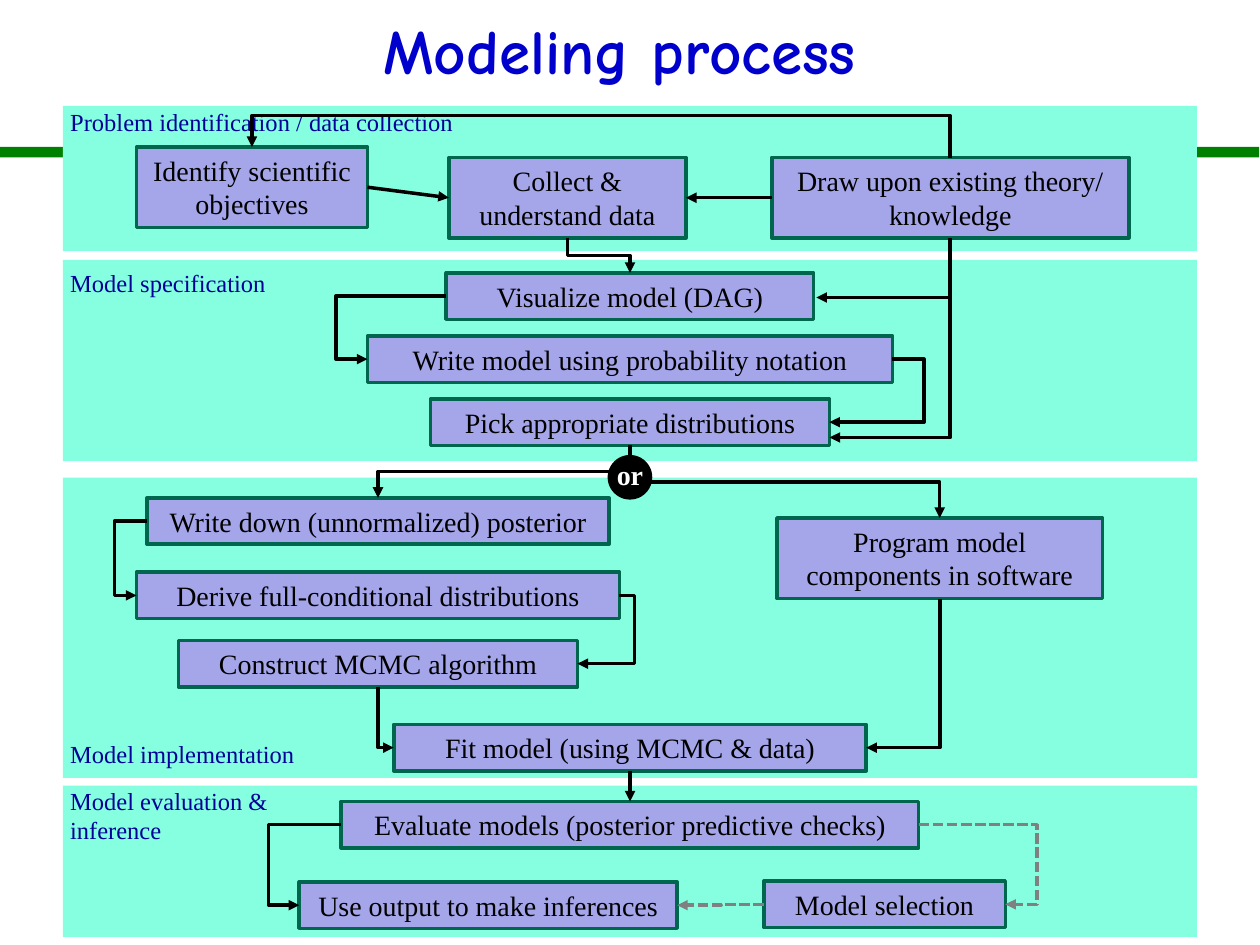
from lxml.etree import SubElement
from pptx import Presentation
from pptx.dml.color import RGBColor as Rgb
from pptx.enum.dml import MSO_LINE_DASH_STYLE as Dash
from pptx.enum.shapes import MSO_CONNECTOR as Link, MSO_SHAPE as Preset
from pptx.enum.text import MSO_ANCHOR as Anchor, MSO_AUTO_SIZE as Fit, PP_ALIGN as Align
from pptx.oxml.ns import qn
from pptx.util import Pt

COLORS = {
    "panel": "85FFE0", "rule": "008000", "box": "A5A5E9", "edge": "00664D",
    "title": "0000CC", "label": "000099", "black": "000000",
    "white": "FFFFFF", "optional": "808080",
}
SERIF = "Times New Roman"
TOP, LEFT, BOTTOM, RIGHT = range(4)
ONE, TWO = 26.5, 46  # heights of one-line and two-line boxes

PANELS = [(60.5, 83), (148.5, 115), (273, 171.5), (449, 86.5)]  # top, height

BOXES = {  # text, left, top, width, height
    "objectives": ("Identify scientific objectives", 78, 84, 132, TWO),
    "data": ("Collect & understand data", 256.5, 90, 135.5, TWO),
    "theory": ("Draw upon existing theory/\nknowledge", 441, 90, 204, TWO),
    "visualize": ("Visualize model (DAG)", 255, 156, 210, ONE),
    "notation": ("Write model using probability notation", 210, 192, 300, ONE),
    "distributions": ("Pick appropriate distributions", 246, 228, 228, ONE),
    "posterior": ("Write down (unnormalized) posterior", 84, 284.5, 264, ONE),
    "conditionals": ("Derive full-conditional distributions", 78, 327, 276, ONE),
    "algorithm": ("Construct MCMC algorithm", 102, 366, 228, ONE),
    "fit": ("Fit model (using MCMC & data)", 225, 414, 270, ONE),
    "evaluate": ("Evaluate models (posterior predictive checks)", 195, 458, 330, ONE),
    "inferences": ("Use output to make inferences", 171, 504, 216, ONE),
    "selection": ("Model selection", 436.5, 503.5, 138, ONE),
    "software": ("Program model components in software", 444, 296, 186, TWO),
}

LABELS = [  # text, top, width, height
    ("Problem identification / data collection", 57.5, 239, 24.5),
    ("Model specification", 149.5, 127.5, 24.5),
    ("Model implementation", 418.5, 144, 24.5),
    ("Model evaluation &\ninference", 445.5, 128, 41),
]

STRAIGHT = [
    ("objectives", RIGHT, "data", LEFT),
    ("theory", LEFT, "data", RIGHT),
    ("fit", BOTTOM, "evaluate", TOP),
]

ELBOWS = [  # from, side, to, side, place of the middle leg (None: one corner)
    ("visualize", LEFT, "notation", LEFT, 192),
    ("notation", RIGHT, "distributions", RIGHT, 528),
    ("distributions", BOTTOM, "software", TOP, 275.5),
    ("distributions", BOTTOM, "posterior", TOP, 269.5),
    ("posterior", LEFT, "conditionals", LEFT, 65.5),
    ("conditionals", RIGHT, "algorithm", RIGHT, 362.5),
    ("algorithm", BOTTOM, "fit", LEFT, None),
    ("software", BOTTOM, "fit", RIGHT, None),
    ("evaluate", LEFT, "inferences", LEFT, 153.5),
    ("theory", TOP, "objectives", TOP, 66),
    ("data", BOTTOM, "visualize", TOP, 146),
]

OPTIONAL = [
    ("evaluate", RIGHT, "selection", RIGHT, 592.5),
    ("selection", LEFT, "inferences", RIGHT, 412),
]


def set_values(target, values):
    for name, value in values.items():
        setattr(target, name, value)


def write(shape, text, font, color, align=Align.CENTER, **frame_values):
    """Fill one paragraph, with a line break at each newline."""
    frame = shape.text_frame
    set_values(frame, {"word_wrap": True, "vertical_anchor": Anchor.TOP, **frame_values})
    para = frame.paragraphs[0]
    para.alignment = align
    for number, line in enumerate(text.split("\n")):
        if number:
            para.add_line_break()
        span = para.add_run()
        span.text = line
        set_values(span.font, font)
        span.font.color.rgb = Rgb.from_string(COLORS[color])


def add_block(page, place, fill, edge=None, preset=Preset.RECTANGLE):
    shape = page.shapes.add_shape(preset, *map(Pt, place))
    shape.shadow.inherit = False
    shape.fill.solid()
    shape.fill.fore_color.rgb = Rgb.from_string(COLORS[fill])
    if edge:
        shape.line.color.rgb = Rgb.from_string(COLORS[edge])
        shape.line.width = Pt(2)
    else:
        shape.line.fill.background()
    return shape


def add_text(page, place, *content, **values):
    write(page.shapes.add_textbox(*map(Pt, place)), *content, **values)


def side_point(box, side):
    across = {LEFT: 0, RIGHT: 2}.get(side, 1)
    down = {TOP: 0, BOTTOM: 2}.get(side, 1)
    return box.left + box.width * across // 2, box.top + box.height * down // 2


def style_arrow(arrow, color="black", dash=None):
    arrow.line.color.rgb = Rgb.from_string(COLORS[color])
    arrow.line.width = Pt(2)
    if dash:
        arrow.line.dash_style = dash
    line = arrow.line._get_or_add_ln()
    SubElement(line, qn("a:tailEnd"), type="triangle")
    SubElement(arrow._element.spPr, qn("a:effectLst"))


def add_straight(page, start_box, start_side, end_box, end_side):
    arrow = page.shapes.add_connector(Link.STRAIGHT, 0, 0, 0, 0)
    arrow.begin_connect(start_box, start_side)
    arrow.end_connect(end_box, end_side)
    style_arrow(arrow)


def add_elbow(page, start, end, upright, bend=None, **style):
    """Draw an elbow; upright ones leave vertically and are turned by 90 degrees."""
    (x1, y1), (x2, y2) = start, end
    ends = [x1, y1, x2, y2]
    if upright:
        mid_x, mid_y = (x1 + x2) // 2, (y1 + y2) // 2
        half_x, half_y = (x2 - x1) // 2, (y2 - y1) // 2
        ends = [mid_x - half_y, mid_y + half_x, mid_x + half_y, mid_y - half_x]
    arrow = page.shapes.add_connector(Link.ELBOW, *ends)
    properties = arrow._element.spPr
    if upright:
        properties.find(qn("a:xfrm")).set("rot", "5400000")
    shape = properties.find(qn("a:prstGeom"))
    if bend is None:
        shape.set("prst", "bentConnector2")
    else:
        first, last = (y1, y2) if upright else (x1, x2)
        share = round((Pt(bend) - first) / (last - first) * 100000)
        guides = shape.find(qn("a:avLst"))
        SubElement(guides, qn("a:gd"), name="adj1", fmla=f"val {share}")
    style_arrow(arrow, **style)


def main():
    deck = Presentation()
    deck.slide_width, deck.slide_height = Pt(720), Pt(540)
    page = deck.slides.add_slide(deck.slide_layouts[6])

    # Background rule, panels and title
    add_block(page, (0, 84, 719.5, 6), "rule")
    for top, height in PANELS:
        add_block(page, (36, top, 648, height), "panel")
    add_text(page, (48, 9.5, 612, 44), "Modeling process",
             {"name": "Comic Neue", "size": Pt(36), "bold": True}, "title",
             vertical_anchor=Anchor.BOTTOM)

    # Steps and panel labels
    boxes = {}
    for key, (text, *place) in BOXES.items():
        boxes[key] = add_block(page, place, "box", "edge")
        write(boxes[key], text, {"name": SERIF, "size": Pt(16)}, "black")
    for text, top, width, height in LABELS:
        add_text(page, (33, top, width, height), text,
                 {"name": SERIF, "size": Pt(14)}, "label", Align.LEFT,
                 word_wrap=False, auto_size=Fit.SHAPE_TO_FIT_TEXT)

    # Arrows between steps
    for start, start_side, end, end_side in STRAIGHT:
        add_straight(page, boxes[start], start_side, boxes[end], end_side)
    gray = {"color": "optional", "dash": Dash.SQUARE_DOT}
    for routes, style in ((ELBOWS, {}), (OPTIONAL, gray)):
        for start, start_side, end, end_side, bend in routes:
            add_elbow(page, side_point(boxes[start], start_side),
                      side_point(boxes[end], end_side),
                      start_side in (TOP, BOTTOM), bend, **style)

    # Theory also feeds the model specification
    theory = side_point(boxes["theory"], BOTTOM)
    for target in ((466.5, 170), (474, 250)):
        add_elbow(page, theory, tuple(map(Pt, target)), True)

    # Choice between the two routes
    choice = add_block(page, (347.25, 260, 25.5, 25.5), "black", preset=Preset.OVAL)
    write(choice, "or", {"name": SERIF, "size": Pt(16), "bold": True}, "white",
          vertical_anchor=Anchor.MIDDLE, margin_left=0, margin_right=0,
          margin_top=0, margin_bottom=Pt(3.6))

    deck.save("out.pptx")


if __name__ == "__main__":
    main()
